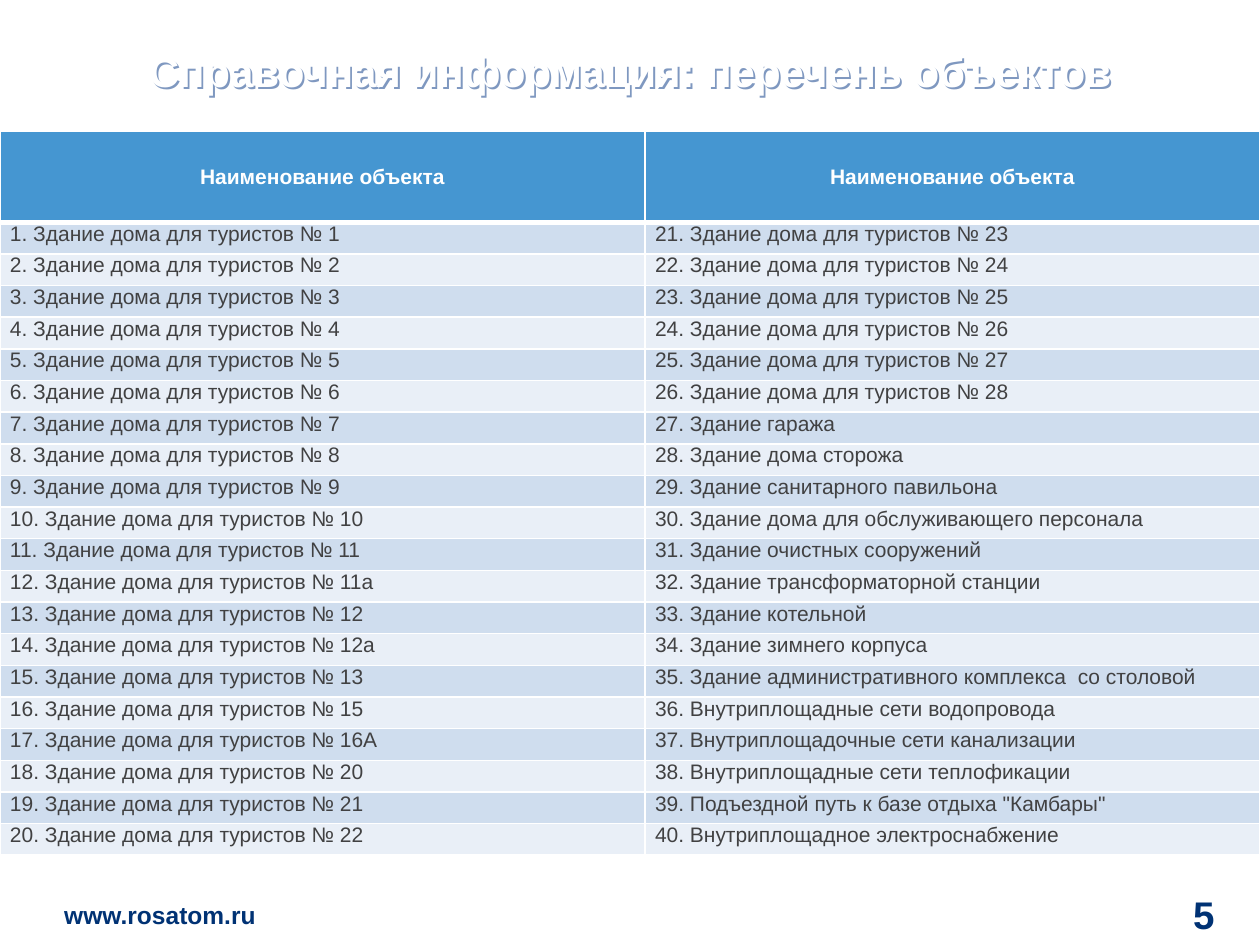
from lxml import etree
from pptx import Presentation
from pptx.dml.color import RGBColor
from pptx.enum.text import MSO_ANCHOR, MSO_AUTO_SIZE, PP_ALIGN
from pptx.oxml import parse_xml
from pptx.util import Pt

MIDDLE, TOP = MSO_ANCHOR.MIDDLE, MSO_ANCHOR.TOP
LEFT, CENTER, RIGHT = PP_ALIGN.LEFT, PP_ALIGN.CENTER, PP_ALIGN.RIGHT
NO_AUTO_SIZE = MSO_AUTO_SIZE.NONE
NAMESPACE = "http://schemas.openxmlformats.org/drawingml/2006/main"
NAVY, WHITE, GRAY = "003274", "FFFFFF", "414142"
HEADER_FILL, BAND_FILLS = "4596D1", ("CFDDEE", "E9EFF7")

HOUSES = "1 2 3 4 5 6 7 8 9 10 11 11а 12 12а 13 15 16А 20 21 22 23 24 25 26 27 28".split()
OBJECTS = [f"Здание дома для туристов № {house}" for house in HOUSES] + [
    "Здание гаража",
    "Здание дома сторожа",
    "Здание санитарного павильона",
    "Здание дома для обслуживающего персонала",
    "Здание очистных сооружений",
    "Здание трансформаторной станции",
    "Здание котельной",
    "Здание зимнего корпуса",
    "Здание административного комплекса  со столовой",
    "Внутриплощадные сети водопровода",
    "Внутриплощадочные сети канализации",
    "Внутриплощадные сети теплофикации",
    'Подъездной путь к базе отдыха "Камбары"',
    "Внутриплощадное электроснабжение",
]
ROWS_PER_COLUMN = 20


def color(value):
    return RGBColor.from_string(value)


def write(container, text, size, value, bold, alignment, anchor, inset=0):
    container.text_frame.text = text
    target = container if hasattr(container, "is_merge_origin") else container.text_frame
    target.vertical_anchor = anchor
    target.margin_left = target.margin_right = Pt(inset)
    target.margin_top = target.margin_bottom = Pt(inset / 2)
    paragraph = container.text_frame.paragraphs[0]
    paragraph.alignment = alignment
    font = paragraph.runs[0].font
    font.name, font.size, font.bold = "Arial", Pt(size), bold
    font.color.rgb = color(value)
    return paragraph


presentation = Presentation()
presentation.slide_width, presentation.slide_height = Pt(720), Pt(540)
slide = presentation.slides.add_slide(presentation.slide_layouts[5])

title = slide.shapes.title
title.left, title.top, title.width, title.height = Pt(36.7), Pt(6.5), Pt(646.6), Pt(71.3)
heading = write(title, "Справочная информация: перечень объектов", 24, WHITE, True, CENTER, MIDDLE)
heading.line_spacing = 0.9
title.text_frame.auto_size = NO_AUTO_SIZE
title.element.spPr.append(parse_xml(
    f'<a:effectLst xmlns:a="{NAMESPACE}"><a:outerShdw dist="{Pt(1.5)}" dir="2700000">'
    '<a:srgbClr val="7F98C0"/></a:outerShdw></a:effectLst>'
))

table = slide.shapes.add_table(ROWS_PER_COLUMN + 1, 2, Pt(0), Pt(75), Pt(720), Pt(414)).table
table.columns[0].width, table.columns[1].width = Pt(368.6), Pt(351.4)
for row_index, row in enumerate(table.rows):
    is_header = row_index == 0
    row.height = Pt(52 if is_header else 18.1)
    for column_index, cell in enumerate(row.cells):
        properties = cell._tc.get_or_add_tcPr()
        for side in ("lnL", "lnR", "lnT", "lnB"):
            is_thick = (is_header and side == "lnB") or (row_index == 1 and side == "lnT")
            line = etree.SubElement(properties, f"{{{NAMESPACE}}}{side}", w=str(Pt(3 if is_thick else 1)))
            line_fill = etree.SubElement(line, f"{{{NAMESPACE}}}solidFill")
            etree.SubElement(line_fill, f"{{{NAMESPACE}}}srgbClr", val=WHITE)
        cell.fill.solid()
        cell.fill.fore_color.rgb = color(HEADER_FILL if is_header else BAND_FILLS[(row_index - 1) % 2])
        if is_header:
            write(cell, "Наименование объекта", 12, WHITE, True, CENTER, MIDDLE, 7.2)
        else:
            number = column_index * ROWS_PER_COLUMN + row_index
            entry = write(cell, f"{number}. {OBJECTS[number - 1]}", 12, GRAY, False, LEFT, TOP)
            entry._p.get_or_add_pPr().set("marL", str(Pt(5.7)))

website = slide.shapes.add_textbox(Pt(36.7), Pt(514.1), Pt(120), Pt(16.6))
write(website, "www.rosatom.ru", 14, NAVY, True, LEFT, TOP)
website.text_frame.word_wrap = True
website.text_frame.auto_size = NO_AUTO_SIZE

page_number = slide.shapes.add_textbox(Pt(655.9), Pt(507.6), Pt(38), Pt(29.5))
write(page_number, "5", 22, NAVY, True, RIGHT, MIDDLE)
page_number.text_frame.word_wrap = True

presentation.save("out.pptx")
